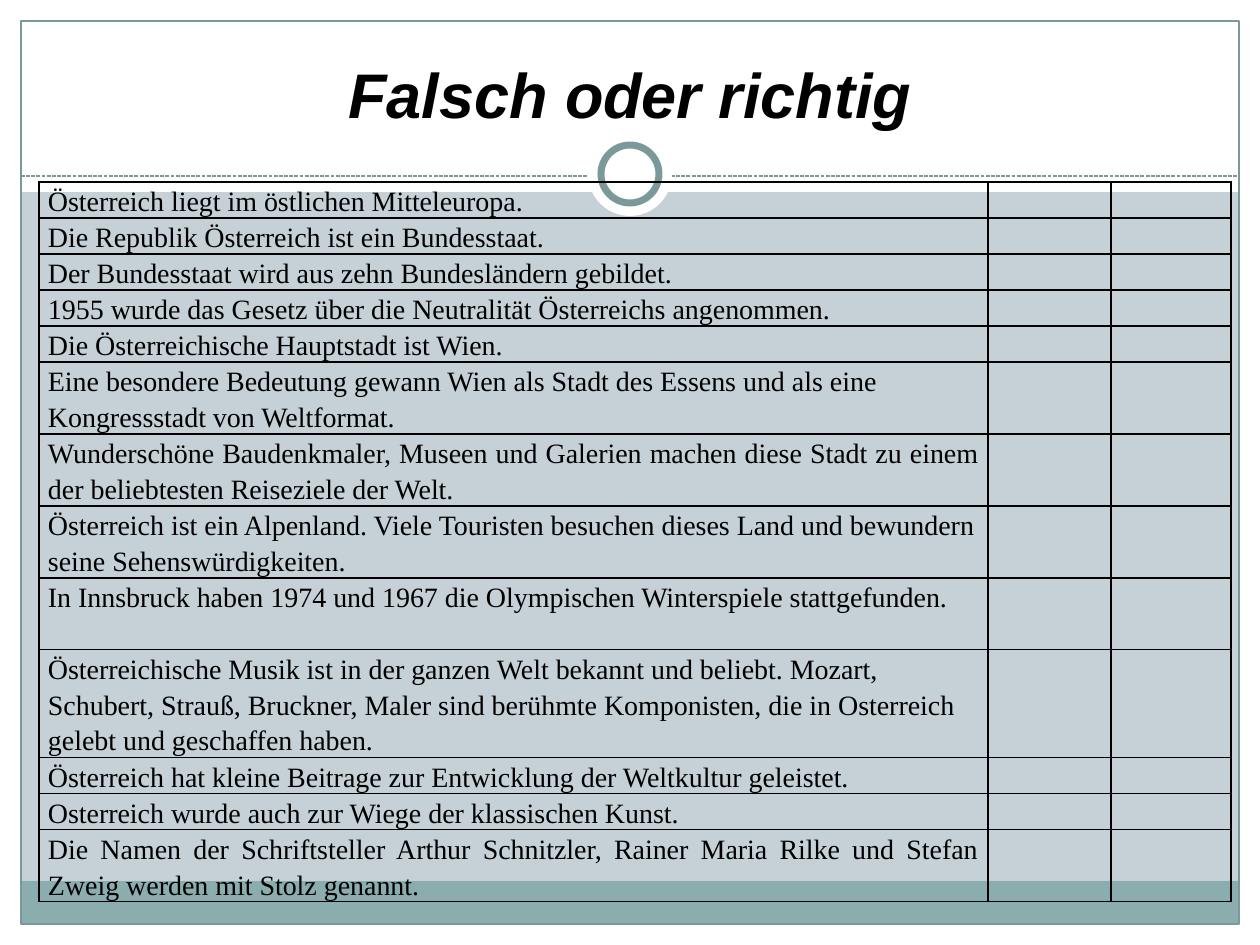
from dataclasses import dataclass

from lxml.etree import SubElement
from pptx import Presentation
from pptx.dml.color import RGBColor
from pptx.enum.dml import MSO_LINE
from pptx.enum.shapes import MSO_CONNECTOR, MSO_SHAPE
from pptx.enum.text import MSO_ANCHOR, PP_ALIGN
from pptx.oxml import parse_xml
from pptx.oxml.ns import nsdecls, qn
from pptx.util import Inches, Pt

SCALE = Inches(1) / 126
WIDTH, HEIGHT = 1260, 945


@dataclass(frozen=True)
class Theme:
    """Colours, fonts and type sizes of the slide."""
    background: str = "C5D1D7"
    paper: str = "FFFFFF"
    band: str = "8CADAE"
    outline: str = "7C999A"
    ink: str = "000000"
    title_font: str = "Arial"
    body_font: str = "Times New Roman"
    title_size: int = 36
    body_size: int = 16
    line_spacing: float = 1.15


THEME = Theme()

FRAME_SHAPES = (
    (MSO_SHAPE.RECTANGLE, (0, 924, WIDTH, 21), THEME.paper, 0),
    (MSO_SHAPE.RECTANGLE, (0, 0, WIDTH, 192), THEME.paper, 0),
    (MSO_SHAPE.RECTANGLE, (0, 0, 21, HEIGHT), THEME.paper, 0),
    (MSO_SHAPE.RECTANGLE, (1239, 0, 21, HEIGHT), THEME.paper, 0),
    (MSO_SHAPE.RECTANGLE, (21, 881, 1217, 43), THEME.band, 0),
    (MSO_SHAPE.RECTANGLE, (21, 21, 1218, 903), None, 0.75),
)
RING_SHAPES = (
    (MSO_SHAPE.OVAL, (588, 132, 84, 84), THEME.paper, 0),
    (MSO_SHAPE.OVAL, (601, 145, 58, 58), THEME.paper, 4),
)

LEFT, JUSTIFIED = PP_ALIGN.LEFT, PP_ALIGN.JUSTIFY
COLUMN_WIDTHS = (949, 123, 120)
LINE_HEIGHT = 36
STATEMENTS = (
    (1, LEFT, "Österreich liegt im östlichen Mitteleuropa."),
    (1, LEFT, "Die Republik Österreich ist ein Bundesstaat."),
    (1, LEFT, "Der Bundesstaat wird aus zehn Bundesländern gebildet."),
    (1, JUSTIFIED, "1955 wurde das Gesetz über die Neutralität Österreichs angenommen."),
    (1, LEFT, "Die Österreichische Hauptstadt ist Wien."),
    (2, LEFT, "Eine besondere Bedeutung gewann Wien als Stadt des Essens und als eine "
              "Kongressstadt von Weltformat."),
    (2, JUSTIFIED, "Wunderschöne Baudenkmaler, Museen und Galerien machen diese Stadt zu einem "
                   "der beliebtesten Reiseziele der Welt."),
    (2, LEFT, "Österreich ist ein Alpenland. Viele Touristen besuchen dieses Land und bewundern "
              "seine Sehenswürdigkeiten."),
    (2, JUSTIFIED, "In Innsbruck haben 1974 und 1967 die Olympischen Winterspiele stattgefunden."),
    (3, LEFT, "Österreichische Musik ist in der ganzen Welt bekannt und beliebt. Mozart, "
              "Schubert, Strauß, Bruckner, Maler sind berühmte Komponisten, die in Osterreich "
              "gelebt und geschaffen haben."),
    (1, LEFT, "Österreich hat kleine Beitrage zur Entwicklung der Weltkultur geleistet."),
    (1, LEFT, "Osterreich wurde auch zur Wiege der klassischen Kunst."),
    (2, JUSTIFIED, "Die Namen der Schriftsteller Arthur Schnitzler, Rainer Maria Rilke und Stefan "
                   "Zweig werden mit Stolz genannt."),
)


def px(length):
    """Turn px into EMU."""
    return round(length * SCALE)


def color(value):
    """Turn a hex string into a colour."""
    return RGBColor.from_string(value)


def assign(target, **values):
    """Set every given attribute on the target."""
    for name, value in values.items():
        setattr(target, name, value)


def add_shape(page, kind, bounds, fill, line_width):
    """Add a preset shape with optional fill and outline."""
    shape = page.shapes.add_shape(kind, *map(px, bounds))
    shape.shadow.inherit = False
    if fill:
        shape.fill.solid()
        shape.fill.fore_color.rgb = color(fill)
    else:
        shape.fill.background()
    if line_width:
        shape.line.color.rgb = color(THEME.outline)
        shape.line.width = Pt(line_width)
    else:
        shape.line.fill.background()


def add_divider(page, left, right, top):
    """Add the dashed horizontal line under the title."""
    line = page.shapes.add_connector(
        MSO_CONNECTOR.STRAIGHT, px(left), px(top), px(right), px(top))
    line.line.color.rgb = color(THEME.outline)
    assign(line.line, width=Pt(0.75), dash_style=MSO_LINE.SQUARE_DOT)
    line.line.fill.solid()
    line.line.color.rgb = color(THEME.outline)
    SubElement(line.element.spPr, qn("a:effectLst"))


def set_title(page, text):
    """Place and format the title above the frame shapes."""
    title = page.shapes.title
    assign(title, left=px(42), top=px(32), width=px(1176), height=px(105))
    frame = title.text_frame
    assign(frame, text=text, vertical_anchor=MSO_ANCHOR.BOTTOM, word_wrap=True)
    para = frame.paragraphs[0]
    para.alignment = PP_ALIGN.CENTER
    font = para.runs[0].font
    assign(font, name=THEME.title_font, size=Pt(THEME.title_size), bold=True, italic=True)
    font.color.rgb = color(THEME.ink)
    title.element.getparent().append(title.element)


def add_borders(cell):
    """Draw a thin line on all four sides of a cell."""
    properties = cell._tc.get_or_add_tcPr()
    for index, side in enumerate("LRTB"):
        properties.insert(index, parse_xml(
            f'<a:ln{side} {nsdecls("a")} w="{Pt(1)}"><a:solidFill>'
            f'<a:srgbClr val="{THEME.ink}"/></a:solidFill></a:ln{side}>'))


def fill_cell(cell, text, alignment):
    """Format a cell and write its text."""
    assign(cell, margin_left=px(9), margin_right=px(9), margin_top=0, margin_bottom=0)
    add_borders(cell)
    cell.fill.background()
    para = cell.text_frame.paragraphs[0]
    assign(para, alignment=alignment, line_spacing=THEME.line_spacing)
    fonts = [para.font]
    if text:
        span = para.add_run()
        span.text = text
        fonts.append(span.font)
    for font in fonts:
        assign(font, name=THEME.body_font, size=Pt(THEME.body_size))
        font.color.rgb = color(THEME.ink)
    if not text:
        mark = SubElement(para._p, qn("a:endParaRPr"))
        mark.set("sz", str(THEME.body_size * 100))


def add_statements(page, left, top):
    """Add the table of statements with two empty answer columns."""
    lines = sum(count for count, _, _ in STATEMENTS)
    table = page.shapes.add_table(
        len(STATEMENTS), len(COLUMN_WIDTHS), px(left), px(top),
        px(sum(COLUMN_WIDTHS)), px(lines * LINE_HEIGHT)).table
    assign(table, first_row=False, horz_banding=False)
    for column, width in zip(table.columns, COLUMN_WIDTHS):
        column.width = px(width)
    for row, (count, alignment, text) in zip(table.rows, STATEMENTS):
        row.height = px(count * LINE_HEIGHT)
        for cell, content in zip(row.cells, (text, "", "")):
            fill_cell(cell, content, alignment)


def main():
    """Build and save the slide."""
    deck = Presentation()
    assign(deck, slide_width=px(WIDTH), slide_height=px(HEIGHT))
    page = deck.slides.add_slide(deck.slide_layouts[5])
    page.background.fill.solid()
    page.background.fill.fore_color.rgb = color(THEME.background)
    for shape in FRAME_SHAPES:
        add_shape(page, *shape)
    add_divider(page, 21, 1239, 176)
    for shape in RING_SHAPES:
        add_shape(page, *shape)
    set_title(page, "Falsch oder richtig")
    add_statements(page, 39, 182)
    deck.save("out.pptx")


if __name__ == "__main__":
    main()
